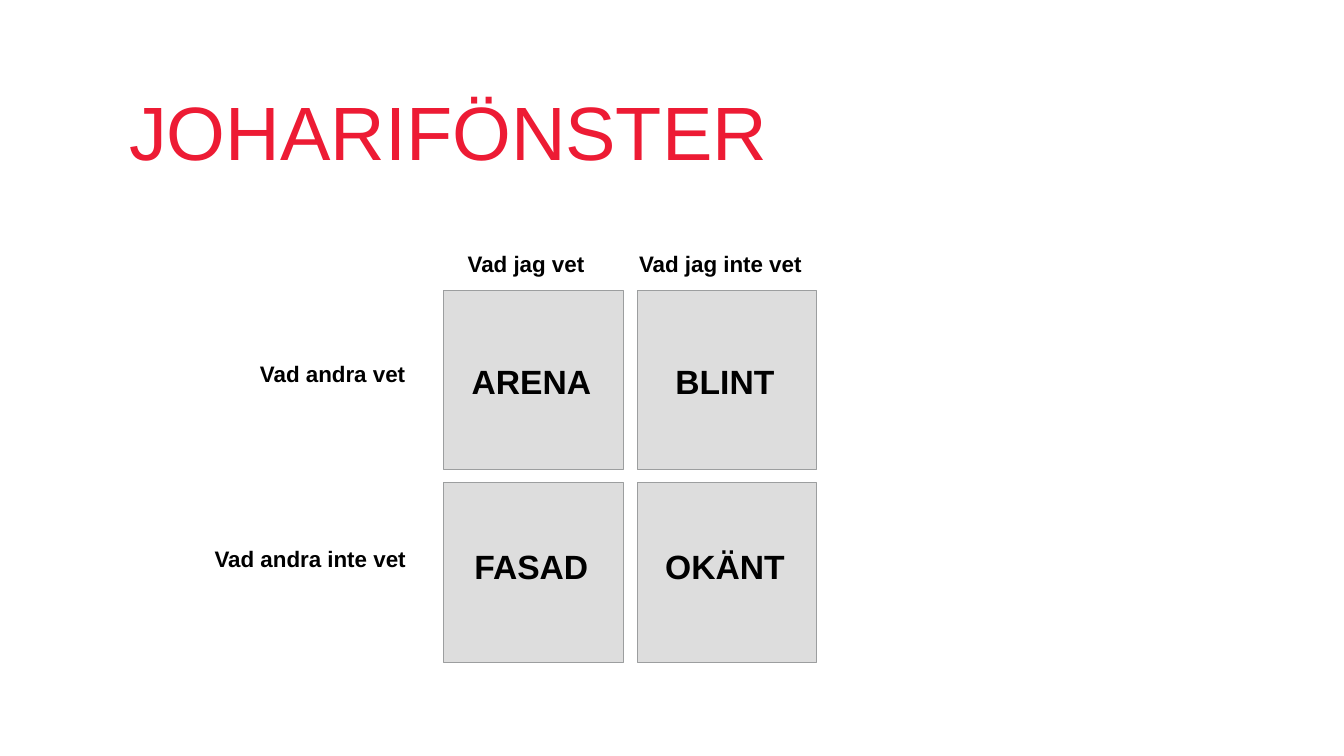
from pptx import Presentation
from pptx.dml.color import RGBColor
from pptx.enum.shapes import MSO_SHAPE
from pptx.enum.text import MSO_ANCHOR, PP_ALIGN
from pptx.util import Inches, Pt

RED = RGBColor(0xED, 0x1B, 0x34)
BLACK = RGBColor(0x00, 0x00, 0x00)
PANE_GRAY = RGBColor(0xDD, 0xDD, 0xDD)
BORDER_GRAY = RGBColor(0x9C, 0x9E, 0x9F)

PANE_SIZE = 1.78
COLUMN_PITCH = 1.92
ROW_PITCH = 1.91
TEXT_ROW_PITCH = 1.84
PANE_NAMES = [["ARENA", "BLINT"], ["FASAD", "OKÄNT"]]
COLUMN_HEADINGS = [("Vad jag vet", 0.14, 1.63), ("Vad jag inte vet", -0.08, 2.14)]
ROW_HEADINGS = [("Vad andra vet", 1.78), ("Vad andra inte vet", 2.23)]


def style_text(frame, size, color, bold, align):
    paragraph = frame.paragraphs[0]
    paragraph.alignment = align
    font = paragraph.runs[0].font
    font.name = "Arial"
    font.size = Pt(size)
    font.bold = bold
    font.color.rgb = color


def set_insets(frame, inset):
    frame.margin_left = frame.margin_right = Inches(inset)
    frame.margin_top = frame.margin_bottom = Inches(inset)


def add_heading(slide, left, top, width, height):
    heading = slide.shapes.title
    heading.left, heading.top = Inches(left), Inches(top)
    heading.width, heading.height = Inches(width), Inches(height)
    frame = heading.text_frame
    frame.text = "JOHARIFÖNSTER"
    frame.vertical_anchor = MSO_ANCHOR.BOTTOM
    set_insets(frame, 0)
    style_text(frame, 54, RED, False, PP_ALIGN.LEFT)
    frame.paragraphs[0].line_spacing = 0.8


def add_label(slide, text, left, top, width, height, size=16, align=PP_ALIGN.LEFT):
    label = slide.shapes.add_textbox(
        Inches(left), Inches(top), Inches(width), Inches(height))
    frame = label.text_frame
    frame.text = text
    frame.word_wrap = True
    frame.vertical_anchor = MSO_ANCHOR.TOP
    set_insets(frame, 0.1)
    style_text(frame, size, BLACK, True, align)


def add_pane(slide, left, top):
    pane = slide.shapes.add_shape(
        MSO_SHAPE.RECTANGLE, Inches(left), Inches(top),
        Inches(PANE_SIZE), Inches(PANE_SIZE))
    pane.shadow.inherit = False
    pane.fill.solid()
    pane.fill.fore_color.rgb = PANE_GRAY
    pane.line.color.rgb = BORDER_GRAY
    pane.line.width = Pt(0.75)


def add_johari_window(slide, left, top):
    for row, names in enumerate(PANE_NAMES):
        for column, name in enumerate(names):
            pane_left = left + column * COLUMN_PITCH
            add_pane(slide, pane_left, top + row * ROW_PITCH)
            add_label(slide, name, pane_left - 0.6, top + 0.6 + row * TEXT_ROW_PITCH,
                      2.94, 0.44, 24, PP_ALIGN.CENTER)
    for column, (text, offset, width) in enumerate(COLUMN_HEADINGS):
        add_label(slide, text, left + column * COLUMN_PITCH + offset, top - 0.5,
                  width, 0.28)
    for row, (text, width) in enumerate(ROW_HEADINGS):
        add_label(slide, text, left - 0.14 - width, top + 0.59 + row * TEXT_ROW_PITCH,
                  width, 0.35)


def main():
    presentation = Presentation()
    presentation.slide_width = Inches(13.33)
    presentation.slide_height = Inches(7.5)
    slide = presentation.slides.add_slide(presentation.slide_layouts[5])
    add_heading(slide, 1.28, 0.52, 9.08, 1.22)
    add_johari_window(slide, 4.4, 2.88)
    presentation.save("out.pptx")


if __name__ == "__main__":
    main()
